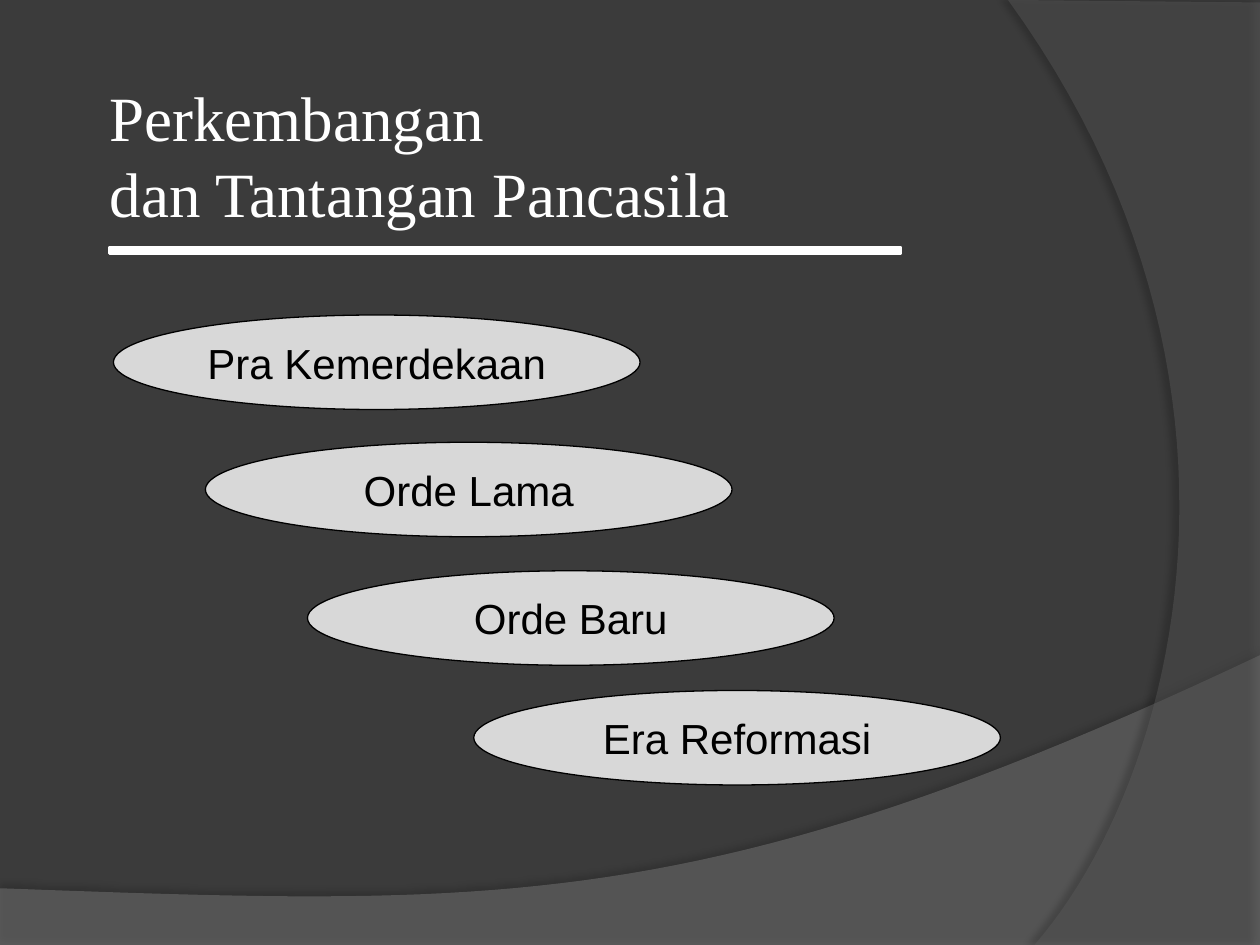
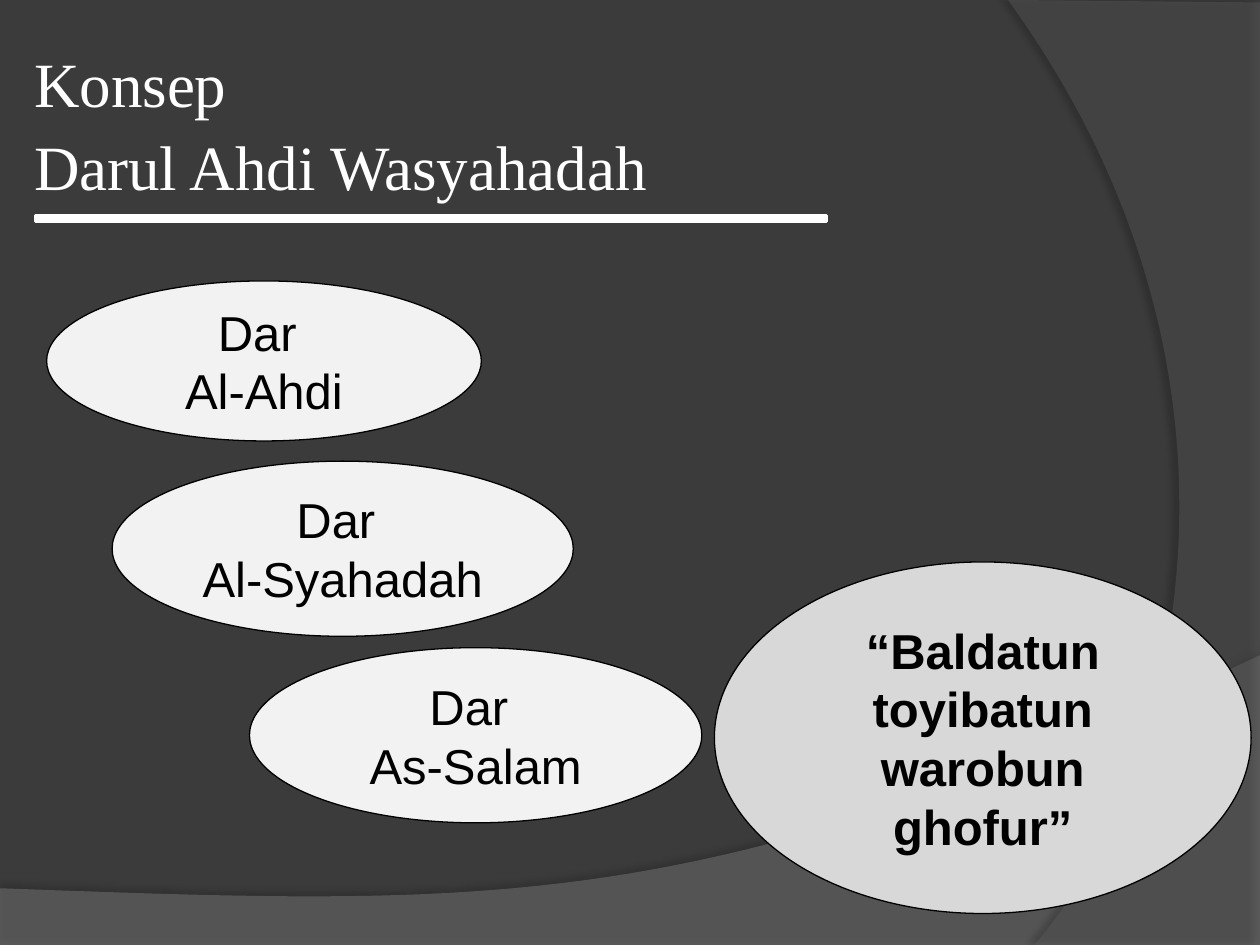
from pptx import Presentation
from pptx.dml.color import RGBColor
from pptx.enum.shapes import MSO_SHAPE
from pptx.enum.text import MSO_ANCHOR, MSO_AUTO_SIZE, PP_ALIGN
from pptx.oxml.ns import qn
from pptx.oxml.xmlchemy import OxmlElement
from pptx.util import Inches, Pt

OVAL, RECT = MSO_SHAPE.OVAL, MSO_SHAPE.RECTANGLE
LEFT, CENTER = PP_ALIGN.LEFT, PP_ALIGN.CENTER
MIDDLE, NO_FIT = MSO_ANCHOR.MIDDLE, MSO_AUTO_SIZE.NONE

# Shared style; the grid has 40 columns and 30 rows of square cells
CELL = 0.25
BACK, WHITE, BLACK = "3B3B3B", "FFFFFF", "000000"
GREY, PALE = "D8D8D8", "F2F2F2"
SERIF, SANS = "Times New Roman", "Arial"


def color(text):
    return RGBColor.from_string(text)


def grid(*cells):
    return [Inches(cell * CELL) for cell in cells]


def node(parent, tag, **attrs):
    child = OxmlElement(tag)
    for name, value in attrs.items():
        child.set(name, str(value))
    parent.append(child)
    return child


def curve(points, steps=48):
    """Points along a cubic curve with the four given control points."""
    for step in range(steps + 1):
        t = step / steps
        parts = ((1 - t) ** 3, 3 * t * (1 - t) ** 2, 3 * t * t * (1 - t), t ** 3)
        yield tuple(sum(part * point[axis] for part, point in zip(parts, points))
                    for axis in (0, 1))


class Deck:
    def __init__(self):
        self.prs = Presentation()
        self.prs.slide_width, self.prs.slide_height = grid(40, 30)
        self.master = self.prs.slide_master
        fill = self.master.background.fill
        fill.solid()
        fill.fore_color.rgb = color(BACK)
        self.slide = None

    def page(self):
        self.slide = self.prs.slides.add_slide(self.prs.slide_layouts[5])

    def style(self, frame, face, size, align, bold=False, gap=1.0):
        frame.vertical_anchor = MIDDLE
        for para in frame.paragraphs:
            para.alignment, para.line_spacing = align, gap
            font = para.font
            font.name, font.size, font.bold = face, Pt(size), bold
            font.color.rgb = color(WHITE if face == SERIF else BLACK)

    def title(self, text, box, gap=1.0):
        shape = self.slide.shapes.title
        shape.left, shape.top, shape.width, shape.height = grid(*box)
        frame = shape.text_frame
        frame.text, frame.auto_size = text, NO_FIT
        frame.margin_left = frame.margin_right = Inches(0.05)
        frame.margin_top = frame.margin_bottom = Inches(0.05)
        self.style(frame, SERIF, 36, LEFT, gap=gap)

    def shape(self, kind, box, fill, line, width):
        shape = self.slide.shapes.add_shape(kind, *grid(*box))
        shape.shadow.inherit = False
        shape.fill.solid()
        shape.fill.fore_color.rgb = color(fill)
        shape.line.color.rgb = color(line)
        shape.line.width = Pt(width)
        return shape

    def rule(self, col, row):
        self.shape(RECT, (col, row, 25.12, 0.2), WHITE, WHITE, 1.5)

    def oval(self, text, box, fill, size, bold=False):
        frame = self.shape(OVAL, box, fill, BLACK, 0.75).text_frame
        frame.text, frame.word_wrap = text, True
        self.style(frame, SANS, size, CENTER, bold)

    def band(self, index, points, fill, alpha, shade, far, angle):
        """Draw a see-through band and move it to the master."""
        spots = [grid(*point) for point in points]
        path = self.slide.shapes.build_freeform(*spots[0], scale=1.0)
        path.add_line_segments(spots[1:], close=True)
        shape = path.convert_to_shape()
        shape.line.fill.background()
        shape.fill.solid()
        shape.fill.fore_color.rgb = color(fill)
        shape.shadow.inherit = False
        props = shape.element.spPr
        tint = props.find(qn("a:solidFill")).find(qn("a:srgbClr"))
        node(tint, "a:alpha", val=alpha * 1000)
        cast = node(props.find(qn("a:effectLst")), "a:outerShdw", blurRad=Pt(4),
                    dist=Pt(far), dir=angle * 60000, algn="ctr", rotWithShape=0)
        node(node(cast, "a:srgbClr", val=BLACK), "a:alpha", val=shade * 1000)
        shape.element.xpath("./p:nvSpPr/p:cNvPr")[0].set("id", str(100 + index))
        self.master.shapes.element.insert(2 + index, shape.element)


def main():
    deck = Deck()

    # Slide 1: stages in time
    deck.page()
    low = [*curve([(40, 20.8), (22.36, 29.16), (15.64, 28.76), (0, 28.2)]),
           (0, 30.04), (40, 30.04)]
    side = [*curve([(32.84, 30), (37.4, 24.76), (40.72, 12), (32, 0)]),
            (40, 0.08), (40, 30)]
    deck.band(0, low, "7F7F7F", 45, 35, 3.5, 270)
    deck.band(1, side, "5E5E5E", 40, 45, 4, 180)
    deck.title("Perkembangan\ndan Tantangan Pancasila", (3.28, 2.28, 25, 5.24))
    stages = [("Pra Kemerdekaan", 3.6, 10), ("Orde Lama", 6.52, 14.04),
              ("Orde Baru", 9.76, 18.12), ("Era Reformasi", 15.04, 21.92)]
    for text, col, row in stages:
        deck.oval(text, (col, row, 16.72, 3), GREY, 24)
    deck.rule(3.48, 7.84)

    # Slide 2: three concepts and their aim
    deck.page()
    deck.title("Konsep\vDarul Ahdi Wasyahadah", (0.88, 1.52, 33.16, 4.56), 1.1)
    ideas = [("Al-Ahdi", (1.48, 8.92, 13.8, 5.08)),
             ("Al-Syahadah", (3.56, 14.64, 14.64, 5.56)),
             ("As-Salam", (7.92, 20.56, 14.36, 5.56))]
    for name, box in ideas:
        deck.oval("Dar \n" + name, box, PALE, 28)
    deck.oval("“Baldatun toyibatun warobun ghofur”",
              (22.68, 17.84, 17.04, 11.16), GREY, 28, bold=True)
    deck.rule(1.12, 6.84)

    deck.prs.save("out.pptx")


if __name__ == "__main__":
    main()
